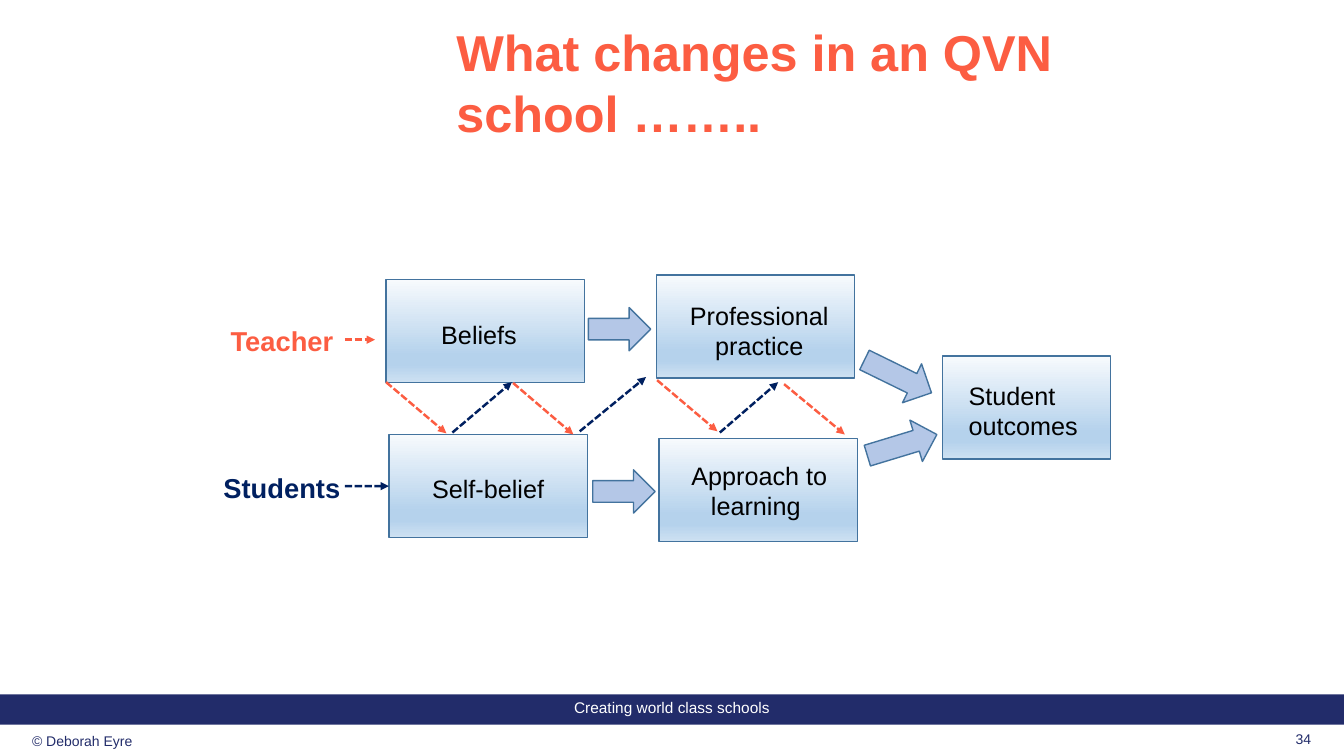
from typing import NamedTuple, Optional

from lxml.etree import SubElement
from pptx import Presentation
from pptx.dml.color import RGBColor
from pptx.enum.dml import MSO_LINE_DASH_STYLE as Dash
from pptx.enum.shapes import MSO_CONNECTOR as Connector, MSO_SHAPE as Shape
from pptx.enum.text import MSO_ANCHOR as Anchor, PP_ALIGN as Align
from pptx.oxml import parse_xml
from pptx.oxml.ns import nsdecls, qn
from pptx.util import Cm, Pt

WHITE = RGBColor(0xFF, 0xFF, 0xFF)
BLACK = RGBColor(0x00, 0x00, 0x00)
INDIGO = RGBColor(0x22, 0x2C, 0x6A)
NAVY = RGBColor(0x00, 0x20, 0x60)
CORAL = RGBColor(0xFC, 0x5D, 0x42)
PALE_BLUE = RGBColor(0xB4, 0xC7, 0xE7)
OUTLINE = RGBColor(0x43, 0x73, 0x9E)
GRADIENT = [
    (0, RGBColor(0xF7, 0xFA, 0xFD)),
    (74, RGBColor(0xB5, 0xD2, 0xEC)),
    (83, RGBColor(0xB5, 0xD2, 0xEC)),
    (100, RGBColor(0xCE, 0xE1, 0xF2)),
]

FONT = "Arial"
SLIDE_W, SLIDE_H = 33.87, 19.05
BOX_H, ARROW_H = 2.6, 1.09
ONE_LINE, TWO_LINES, LABEL_H = 1.02, 1.8, 1.09


# All lengths below are centimetres
class Text(NamedTuple):
    text: str
    x: float
    y: float
    w: float
    h: float
    size: float = 18
    color: RGBColor = BLACK
    bold: bool = False
    align: Align = Align.LEFT
    anchor: Anchor = Anchor.TOP
    top_inset: Optional[float] = None  # when given, the other insets are zero


class Box(NamedTuple):
    x: float
    y: float
    w: float = 5.0


class BlockArrow(NamedTuple):
    x: float
    y: float
    w: float = 1.57
    rotation: float = 0


class DashedArrow(NamedTuple):
    x1: float
    y1: float
    x2: float
    y2: float
    color: RGBColor
    target: Optional[str] = None  # box joined at the middle of its left side


FOOTER = [
    Text("Creating world class schools", 0, 17.5, SLIDE_W, 0.76, 11, WHITE,
         align=Align.CENTER, top_inset=0.08),
    Text("34", 22.35, 18.29, 10.69, 0.56, 10, INDIGO,
         align=Align.RIGHT, top_inset=0.13),
    Text("© Deborah Eyre", 0.81, 18.34, 10.69, 0.56, 10, INDIGO, top_inset=0.13),
]
TITLE = Text("What changes in an QVN school ……..", 11.25, 0.53, 19.46, 3.07,
             36, CORAL, bold=True, anchor=Anchor.MIDDLE)
BOXES = {
    "practice": Box(16.54, 6.93),
    "approach": Box(16.61, 11.05),
    "beliefs": Box(9.73, 7.04),
    "self-belief": Box(9.8, 10.95),
    "outcomes": Box(23.75, 8.97, 4.24),
}
LABELS = [
    Text("Beliefs", 10.87, 7.92, 2.44, ONE_LINE),
    Text("Professional practice", 16.33, 7.44, 5.61, TWO_LINES, align=Align.CENTER),
    Text("Self-belief", 10.64, 11.79, 5.21, ONE_LINE),
    Text("Approach to learning ", 16.99, 11.48, 4.29, TWO_LINES, align=Align.CENTER),
    Text("Student outcomes", 24.16, 9.45, 5.36, TWO_LINES),
    Text("Teacher", 5.56, 8.05, 3.23, LABEL_H, 19.5, CORAL, bold=True),
    Text("Students", 5.38, 11.76, 3.5, LABEL_H, 19.5, NAVY, bold=True),
]
BLOCK_ARROWS = [
    BlockArrow(14.83, 7.75),
    BlockArrow(21.82, 10.67, 1.83, 343.1),
    BlockArrow(14.94, 11.84),
    BlockArrow(21.69, 8.94, 1.88, 26.1),
]
DASHED_ARROWS = [
    DashedArrow(9.73, 9.63, 11.25, 10.92, CORAL),
    DashedArrow(12.93, 9.65, 14.45, 10.95, CORAL),
    DashedArrow(16.56, 9.58, 18.08, 10.87, CORAL),
    DashedArrow(11.4, 10.9, 12.9, 9.63, NAVY),
    DashedArrow(19.76, 9.68, 21.29, 10.95, CORAL),
    DashedArrow(14.61, 10.87, 16.28, 9.5, NAVY),
    DashedArrow(18.14, 10.9, 19.61, 9.63, NAVY),
    DashedArrow(8.69, 8.56, 9.45, 8.56, CORAL),
    DashedArrow(8.69, 12.25, 9.8, 12.25, NAVY, "self-belief"),
]


def add_text(s, t: Text) -> None:
    sp = s.shapes.add_textbox(Cm(t.x), Cm(t.y), Cm(t.w), Cm(t.h))
    tf = sp.text_frame
    tf.word_wrap = True
    tf.vertical_anchor = t.anchor
    if t.top_inset is not None:
        tf.margin_left = tf.margin_right = tf.margin_bottom = 0
        tf.margin_top = Cm(t.top_inset)
    p = tf.paragraphs[0]
    p.alignment = t.align
    r = p.add_run()
    r.text = t.text
    r.font.name = FONT
    r.font.size = Pt(t.size)
    r.font.bold = t.bold
    r.font.color.rgb = t.color


def add_preset(s, kind: Shape, x: float, y: float, w: float, h: float,
               fill: Optional[RGBColor], line: Optional[RGBColor]):
    sp = s.shapes.add_shape(kind, Cm(x), Cm(y), Cm(w), Cm(h))
    sp.shadow.inherit = False
    if fill is None:
        set_gradient(sp)
    else:
        sp.fill.solid()
        sp.fill.fore_color.rgb = fill
    if line is None:
        sp.line.fill.background()
    else:
        sp.line.color.rgb = line
        sp.line.width = Pt(1)
    return sp


def set_gradient(sp) -> None:
    stops = "".join(
        f'<a:gs pos="{pos * 1000}"><a:srgbClr val="{color}"/></a:gs>'
        for pos, color in GRADIENT)
    grad = parse_xml(f'<a:gradFill {nsdecls("a")} rotWithShape="1">'
                     f'<a:gsLst>{stops}</a:gsLst>'
                     '<a:lin ang="5400000" scaled="0"/></a:gradFill>')
    sp._element.spPr.find(qn("a:prstGeom")).addnext(grad)


def add_dashed_arrow(s, a: DashedArrow, boxes: dict) -> None:
    sp = s.shapes.add_connector(Connector.STRAIGHT,
                                Cm(a.x1), Cm(a.y1), Cm(a.x2), Cm(a.y2))
    if a.target:
        sp.end_connect(boxes[a.target], 1)
    sp.line.color.rgb = a.color
    sp.line.width = Pt(1.75)
    sp.line.dash_style = Dash.SQUARE_DOT
    SubElement(sp.line._get_or_add_ln(), qn("a:tailEnd"), type="triangle")
    SubElement(sp._element.spPr, qn("a:effectLst"))


def main() -> None:
    prs = Presentation()
    prs.slide_width, prs.slide_height = Cm(SLIDE_W), Cm(SLIDE_H)
    s = prs.slides.add_slide(prs.slide_layouts[6])

    # Footer and title
    add_preset(s, Shape.RECTANGLE, 0, 17.5, SLIDE_W, 0.76, INDIGO, None)
    for t in [*FOOTER, TITLE]:
        add_text(s, t)

    # Boxes, block arrows and their labels
    boxes = {name: add_preset(s, Shape.RECTANGLE, b.x, b.y, b.w, BOX_H, None, OUTLINE)
             for name, b in BOXES.items()}
    for t in LABELS:
        add_text(s, t)
    for b in BLOCK_ARROWS:
        sp = add_preset(s, Shape.RIGHT_ARROW, b.x, b.y, b.w, ARROW_H, PALE_BLUE, OUTLINE)
        sp.rotation = b.rotation

    # Dashed arrows between teacher and student rows
    for a in DASHED_ARROWS:
        add_dashed_arrow(s, a, boxes)

    prs.save("out.pptx")


if __name__ == "__main__":
    main()
